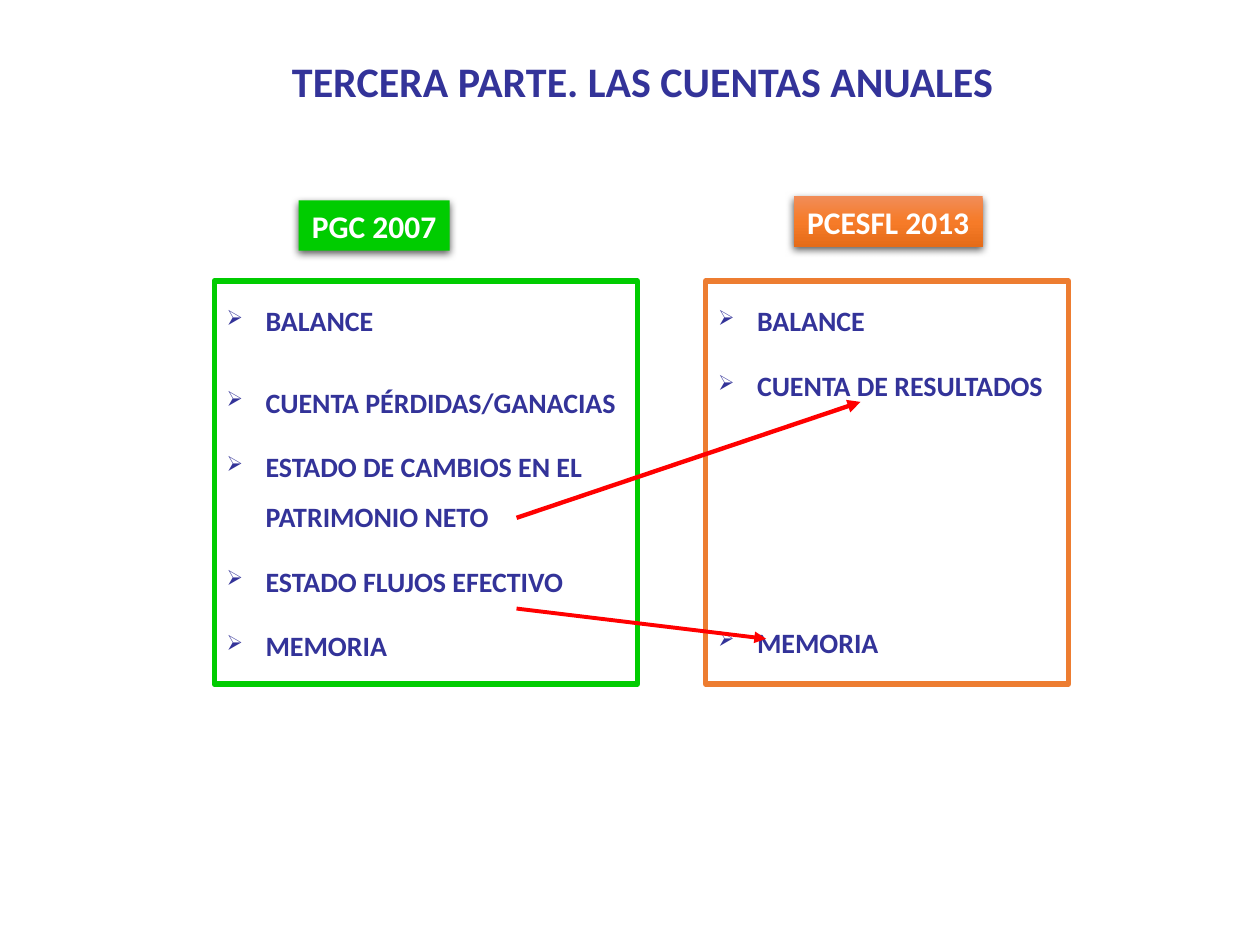
from dataclasses import dataclass

from lxml.etree import SubElement
from pptx import Presentation
from pptx.dml.color import RGBColor
from pptx.enum.shapes import MSO_CONNECTOR, MSO_SHAPE
from pptx.enum.text import MSO_ANCHOR, MSO_AUTO_SIZE, PP_ALIGN
from pptx.oxml.ns import qn
from pptx.util import Inches, Pt


@dataclass(frozen=True)
class Theme:
    font: str = "Calibri"
    title_size: int = 24
    label_size: int = 18
    item_size: int = 16
    navy: str = "333399"
    white: str = "FFFFFF"
    green: str = "00CC00"
    orange: str = "ED7D31"
    red: str = "FF0000"
    shadow: str = "000000"
    orange_stops: tuple = ((0, "F18C57"), (50, "F67B28"), (100, "E56C19"))


@dataclass(frozen=True)
class Item:
    text: str
    spacing: float = 1.5
    before: float = 8


@dataclass(frozen=True)
class Panel:
    left: float
    width: float
    color: str
    items: tuple


@dataclass(frozen=True)
class Label:
    text: str
    left: float
    top: float
    width: float
    fill: str | tuple


@dataclass(frozen=True)
class Arrow:
    start: tuple
    end: tuple
    weight: float


T = Theme()
PANEL_TOP, PANEL_HEIGHT, LABEL_HEIGHT = 2.23, 3.2, 0.4
INDENT = Inches(0.31)

PANELS = (
    Panel(5.6, 2.88, T.orange, (
        Item("BALANCE"),
        Item("CUENTA DE RESULTADOS"),
        Item("MEMORIA", before=118),
    )),
    Panel(1.7, 3.36, T.green, (
        Item("BALANCE"),
        Item("CUENTA PÉRDIDAS/GANACIAS", spacing=2),
        Item("ESTADO DE CAMBIOS EN EL PATRIMONIO NETO"),
        Item("ESTADO FLUJOS EFECTIVO"),
        Item("MEMORIA"),
    )),
)
LABELS = (
    Label("PGC 2007", 2.37, 1.59, 1.2, T.green),
    Label("PCESFL 2013", 6.3, 1.56, 1.5, T.orange_stops),
)
ARROWS = (
    Arrow((4.1, 4.11), (6.83, 3.19), 2.5),
    Arrow((4.1, 4.83), (6.08, 5.07), 2.25),
)


def rgb(color: str) -> RGBColor:
    return RGBColor.from_string(color)


def add_node(parent, tag: str, **attrs):
    return SubElement(parent, qn(tag), {k: str(v) for k, v in attrs.items()})


def format_text(p, size: int, color: str) -> None:
    for r in p.runs:
        r.font.name = T.font
        r.font.size = Pt(size)
        r.font.bold = True
        r.font.color.rgb = rgb(color)


def set_single_line(tf, text: str, size: int, color: str) -> None:
    tf.text = text
    tf.word_wrap = False
    tf.auto_size = MSO_AUTO_SIZE.NONE
    tf.vertical_anchor = MSO_ANCHOR.TOP
    p = tf.paragraphs[0]
    p.alignment = PP_ALIGN.CENTER
    format_text(p, size, color)


def add_bullet(p) -> None:
    pPr = p._p.get_or_add_pPr()
    pPr.set("marL", str(INDENT))
    pPr.set("indent", str(-INDENT))
    add_node(pPr, "a:buSzPct", val=75000)
    add_node(pPr, "a:buChar", char="➢")


def fill_gradient(sp, stops: tuple) -> None:
    """Fill from top to bottom with (percent, colour) stops."""
    sp.fill.gradient()
    sp.fill.gradient_angle = 270
    gs_list = sp._element.spPr.find(".//" + qn("a:gsLst"))
    for old in list(gs_list):
        gs_list.remove(old)
    for percent, color in stops:
        gs = add_node(gs_list, "a:gs", pos=percent * 1000)
        add_node(gs, "a:srgbClr", val=color)


def add_shadow(sp) -> None:
    sp.shadow.inherit = False
    effects = sp._element.spPr.find(qn("a:effectLst"))
    outer = add_node(effects, "a:outerShdw", blurRad=Pt(4.5), dist=Pt(1.5),
                     dir=5400000, rotWithShape=0)
    color = add_node(outer, "a:srgbClr", val=T.shadow)
    add_node(color, "a:alpha", val=63000)


def add_panel(s, panel: Panel) -> None:
    sp = s.shapes.add_shape(MSO_SHAPE.RECTANGLE, Inches(panel.left), Inches(PANEL_TOP),
                            Inches(panel.width), Inches(PANEL_HEIGHT))
    sp.shadow.inherit = False
    sp.fill.solid()
    sp.fill.fore_color.rgb = rgb(T.white)
    sp.line.color.rgb = rgb(panel.color)
    sp.line.width = Pt(3)
    tf = sp.text_frame
    tf.word_wrap = True
    tf.vertical_anchor = MSO_ANCHOR.TOP
    tf.text = "\n".join(item.text for item in panel.items)
    for p, item in zip(tf.paragraphs, panel.items):
        p.alignment = PP_ALIGN.LEFT
        p.line_spacing = item.spacing
        p.space_before = Pt(item.before)
        add_bullet(p)
        format_text(p, T.item_size, T.navy)


def add_label(s, label: Label) -> None:
    sp = s.shapes.add_shape(MSO_SHAPE.RECTANGLE, Inches(label.left), Inches(label.top),
                            Inches(label.width), Inches(LABEL_HEIGHT))
    if isinstance(label.fill, tuple):
        fill_gradient(sp, label.fill)
    else:
        sp.fill.solid()
        sp.fill.fore_color.rgb = rgb(label.fill)
    sp.line.fill.background()
    add_shadow(sp)
    set_single_line(sp.text_frame, label.text, T.label_size, T.white)


def add_title(s, text: str) -> None:
    tb = s.shapes.add_textbox(Inches(2.19), Inches(0.39), Inches(5.82), Inches(0.5))
    set_single_line(tb.text_frame, text, T.title_size, T.navy)


def add_arrow(s, arrow: Arrow) -> None:
    points = (Inches(v) for v in arrow.start + arrow.end)
    cx = s.shapes.add_connector(MSO_CONNECTOR.STRAIGHT, *points)
    cx.line.color.rgb = rgb(T.red)
    cx.line.width = Pt(arrow.weight)
    add_node(cx.line._get_or_add_ln(), "a:tailEnd", type="triangle")
    add_node(cx._element.spPr, "a:effectLst")


def main() -> None:
    prs = Presentation()
    prs.slide_width, prs.slide_height = Inches(10), Inches(7.5)
    s = prs.slides.add_slide(prs.slide_layouts[6])
    for panel in PANELS:
        add_panel(s, panel)
    add_title(s, "TERCERA PARTE. LAS CUENTAS ANUALES")
    for arrow in ARROWS:
        add_arrow(s, arrow)
    for label in LABELS:
        add_label(s, label)
    prs.save("out.pptx")


if __name__ == "__main__":
    main()
